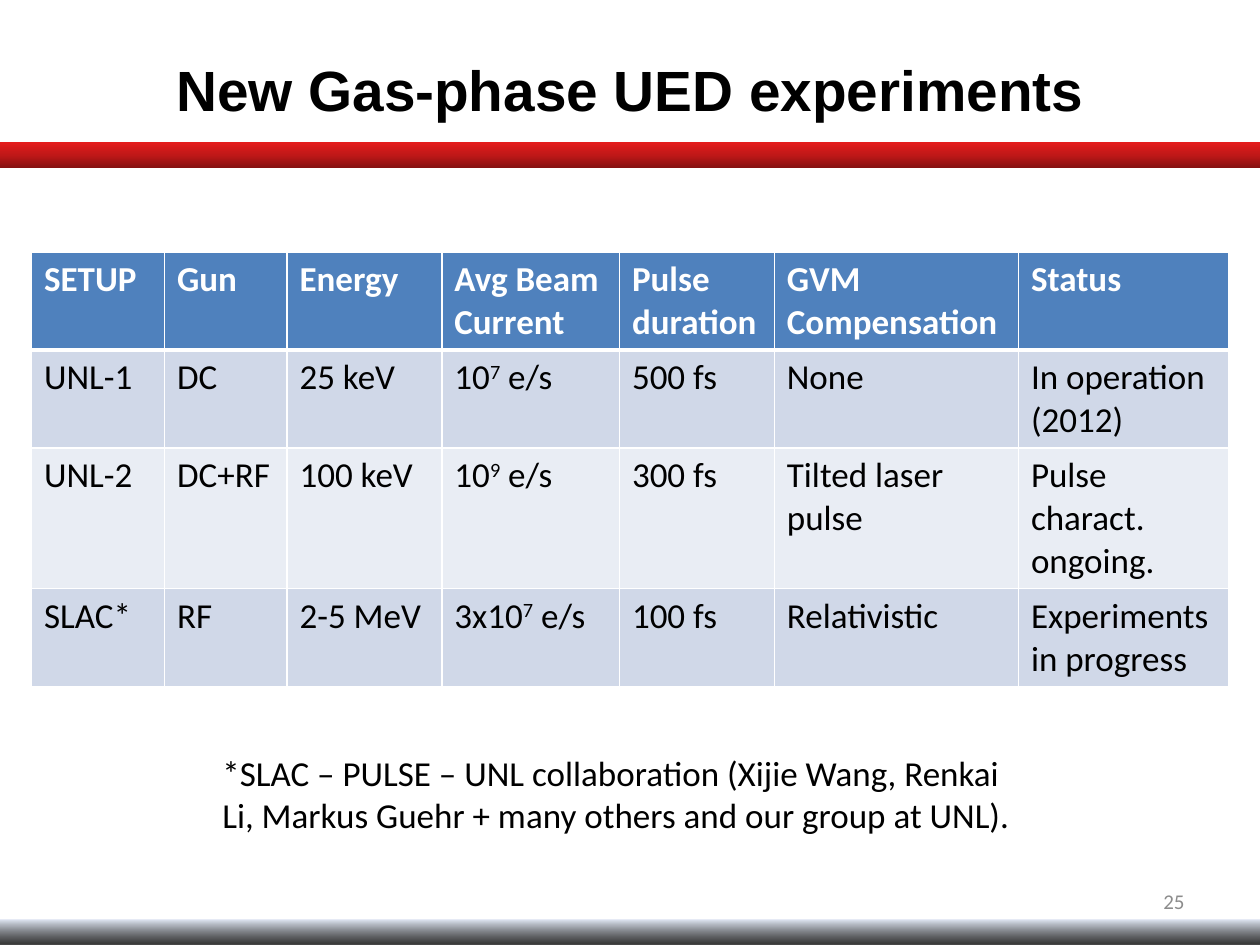
from lxml.etree import SubElement
from pptx import Presentation
from pptx.dml.color import RGBColor
from pptx.enum.shapes import MSO_SHAPE as Shape
from pptx.enum.text import MSO_ANCHOR as Anchor, PP_ALIGN as Align
from pptx.oxml.ns import qn
from pptx.util import Pt

# Content: text between carets is superscript
TITLE = "New Gas-phase UED experiments"
ROWS = [
    ["SETUP", "Gun", "Energy", "Avg Beam Current", "Pulse duration",
     "GVM Compensation", "Status"],
    ["UNL-1", "DC", "25 keV", "10^7^ e/s", "500 fs", "None",
     "In operation (2012)"],
    ["UNL-2", "DC+RF", "100 keV", "10^9^ e/s", "300 fs",
     "Tilted laser pulse", "Pulse charact. ongoing."],
    ["SLAC*", "RF", "2-5 MeV", "3x10^7^ e/s", "100 fs", "Relativistic",
     "Experiments in progress"],
]
FOOTNOTE = ("*SLAC – PULSE – UNL collaboration (Xijie Wang, Renkai Li, "
            "Markus Guehr + many others and our group at UNL).")
PAGE_NUMBER = "25"

COLUMN_WIDTHS = [76, 70, 88.5, 101.5, 88.5, 139.5, 120]
ROW_HEIGHTS = [56, 56, 80.4, 56]
HEADER_FILL, BAND_FILLS = "4F81BD", ["E9EDF4", "D0D8E8"]

# Bars: top, gradient stops from the lower edge up (percent, colour, opacity)
BARS = [
    (525.6, [(5, "000000", 77), (100, "E1E8F5", 100)]),
    (81.4, [(0, "871111", 100), (50, "C01818", 100), (100, "E41C1C", 100)]),
]


def color(value):
    return RGBColor.from_string(value)


def write(frame, text, size=20, font="Calibri", fill="000000", bold=False,
          align=Align.LEFT, anchor=Anchor.TOP):
    frame.word_wrap = True
    frame.vertical_anchor = anchor
    para = frame.paragraphs[0]
    para.alignment = align
    for index, piece in enumerate(text.split("^")):
        span = para.add_run()
        span.text = piece
        span.font.size, span.font.name, span.font.bold = Pt(size), font, bold
        span.font.color.rgb = color(fill)
        if index % 2:
            span.font._element.set("baseline", "30000")


def add_text(page, left, top, width, height, text, **style):
    box = page.shapes.add_textbox(Pt(left), Pt(top), Pt(width), Pt(height))
    write(box.text_frame, text, **style)


def add_bar(page, top, stops):
    bar = page.shapes.add_shape(Shape.RECTANGLE, 0, Pt(top), Pt(720), Pt(14.4))
    bar.shadow.inherit = False
    bar.line.fill.background()
    bar.fill.gradient()
    bar.fill.gradient_angle = 90
    stop_list = bar._element.spPr.find(".//" + qn("a:gsLst"))
    stop_list.clear()
    for position, value, opacity in stops:
        stop = SubElement(stop_list, qn("a:gs"), pos=str(position * 1000))
        shade = SubElement(stop, qn("a:srgbClr"), val=value)
        if opacity < 100:
            SubElement(shade, qn("a:alpha"), val=str(opacity * 1000))


def add_borders(cell, **widths):
    properties = cell._tc.get_or_add_tcPr()
    for side in "LRTB":
        line = SubElement(properties, qn("a:ln" + side),
                          w=str(Pt(widths.get(side, 1))))
        fill = SubElement(line, qn("a:solidFill"))
        SubElement(fill, qn("a:srgbClr"), val="FFFFFF")


def add_setups(page):
    table = page.shapes.add_table(
        len(ROWS), len(COLUMN_WIDTHS), Pt(18), Pt(144),
        Pt(sum(COLUMN_WIDTHS)), Pt(sum(ROW_HEIGHTS))).table
    for column, width in zip(table.columns, COLUMN_WIDTHS):
        column.width = Pt(width)
    for number, (texts, height) in enumerate(zip(ROWS, ROW_HEIGHTS)):
        table.rows[number].height = Pt(height)
        header = number == 0
        # A thick rule parts the header from the body
        thick = {0: {"B": 3}, 1: {"T": 3}}.get(number, {})
        for cell, text in zip(table.rows[number].cells, texts):
            add_borders(cell, **thick)
            cell.fill.solid()
            cell.fill.fore_color.rgb = color(
                HEADER_FILL if header else BAND_FILLS[number % 2])
            write(cell.text_frame, text, bold=header,
                  fill="FFFFFF" if header else "000000")


def main():
    deck = Presentation()
    deck.slide_width, deck.slide_height = Pt(720), Pt(540)
    page = deck.slides.add_slide(deck.slide_layouts[6])

    # Frame
    for top, stops in BARS:
        add_bar(page, top, stops)
    add_text(page, 90, 6, 540, 90, TITLE, size=32.4, font="Arial", bold=True,
             align=Align.CENTER, anchor=Anchor.MIDDLE)
    add_text(page, 516, 500.5, 168, 28.8, PAGE_NUMBER, size=12, fill="8C8C8C",
             align=Align.RIGHT, anchor=Anchor.MIDDLE)

    # Body
    add_setups(page)
    add_text(page, 120, 426, 474, 55.7, FOOTNOTE)

    deck.save("out.pptx")


if __name__ == "__main__":
    main()
